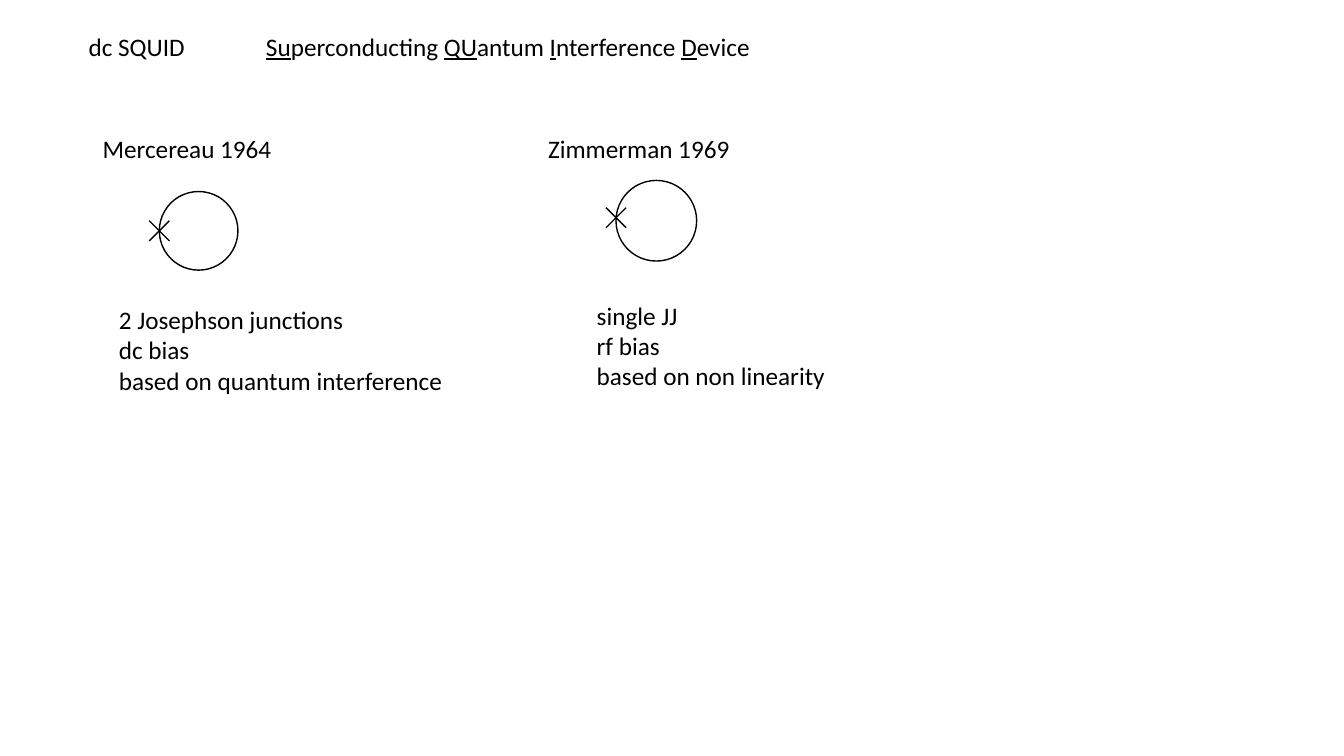
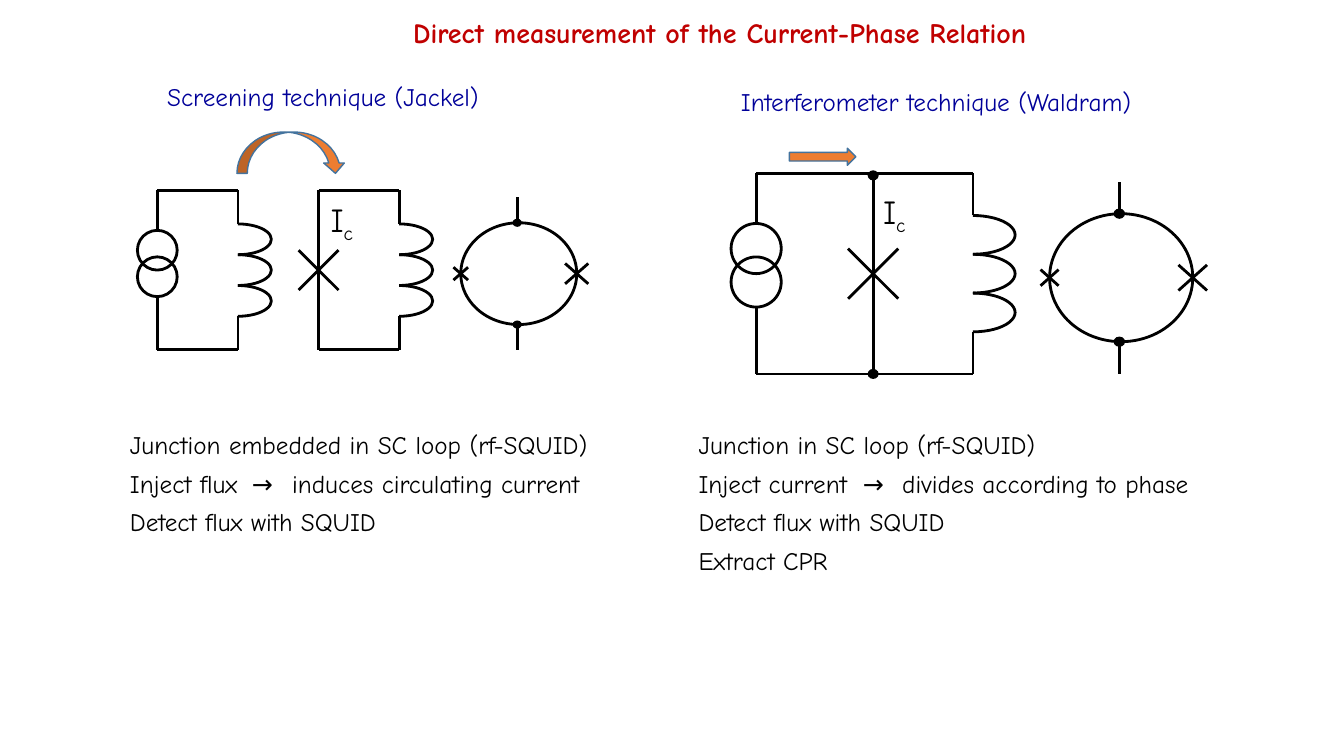
from dataclasses import dataclass

from lxml import etree
from pptx import Presentation
from pptx.dml.color import RGBColor
from pptx.enum.shapes import MSO_CONNECTOR, MSO_SHAPE
from pptx.enum.text import MSO_AUTO_SIZE, PP_ALIGN
from pptx.oxml.ns import qn
from pptx.util import Inches, Pt


@dataclass(frozen=True)
class Theme:
    """Colours, fonts and sizes used by both slides."""

    ink: RGBColor = RGBColor(0, 0, 0)
    paper: RGBColor = RGBColor(255, 255, 255)
    title: RGBColor = RGBColor(0xC0, 0, 0)
    heading: RGBColor = RGBColor(0, 0, 0x99)
    arrow: RGBColor = RGBColor(0xED, 0x7D, 0x31)
    arrow_edge: RGBColor = RGBColor(0x43, 0x73, 0x9E)
    plain: str = "Calibri"
    comic: str = "Comic Neue"
    body_size: int = 18
    title_size: int = 20
    symbol_size: int = 24
    thin: int = 1
    thick: int = 2


T = Theme()
PLAIN = {"name": T.plain, "size": Pt(T.body_size)}
COMIC = {"name": T.comic, "size": Pt(T.body_size)}
TITLE = {"name": T.comic, "size": Pt(T.title_size), "bold": True}
SYMBOL = {"name": T.comic, "size": Pt(T.symbol_size)}
UNDER = {"underline": True}


def apply(obj, values):
    """Set each named attribute on an object."""
    for name, value in values.items():
        setattr(obj, name, value)


def set_tabs(p, stops):
    """Give a paragraph left tab stops in inches."""
    tabs = etree.SubElement(p._p.get_or_add_pPr(), qn("a:tabLst"))
    for stop in stops:
        etree.SubElement(tabs, qn("a:tab"), pos=str(Inches(stop)), algn="l")


def add_text(s, box, paras, font, color=T.ink, para=None, tabs=()):
    """Add a text box whose paragraphs are strings or lists of (text, format) runs."""
    tf = s.shapes.add_textbox(*map(Inches, box)).text_frame
    apply(tf, {"word_wrap": True, "auto_size": MSO_AUTO_SIZE.SHAPE_TO_FIT_TEXT})
    for i, runs in enumerate(paras):
        p = tf.add_paragraph() if i else tf.paragraphs[0]
        if "\t" in runs:
            set_tabs(p, tabs)
        apply(p, para or {})
        for text, extra in [(runs, {})] if isinstance(runs, str) else runs:
            r = p.add_run()
            r.text = text
            values = {**font, **extra}
            baseline = values.pop("baseline", None)
            apply(r.font, values)
            r.font.color.rgb = color
            if baseline:
                r._r.get_or_add_rPr().set("baseline", baseline)


def add_shape(s, kind, box, fill=None, line=T.ink, width=T.thick):
    """Add a preset shape, hollow or unlined where the colour is None."""
    sp = s.shapes.add_shape(kind, *map(Inches, box))
    sp.shadow.inherit = False
    for part, color in ((sp.fill, fill), (sp.line.fill, line)):
        if color is None:
            part.background()
        else:
            part.solid()
            part.fore_color.rgb = color
    if line is not None:
        sp.line.width = Pt(width)
    return sp


def wire(s, *points, width=T.thick):
    """Join successive points with straight lines."""
    for start, end in zip(points, points[1:]):
        cn = s.shapes.add_connector(MSO_CONNECTOR.STRAIGHT, *map(Inches, start + end))
        cn.line.color.rgb = T.ink
        cn.line.width = Pt(width)
        etree.SubElement(cn._element.spPr, qn("a:effectLst"))


def cross(s, x, y, dx, dy, width=T.thick):
    """Mark a junction with a cross centred on a point."""
    for sign in (1, -1):
        wire(s, (x - dx, y - sign * dy), (x + dx, y + sign * dy), width=width)


def dot(s, x, y, w=0.11, h=0.1):
    """Mark a node with a filled dot centred on a point."""
    add_shape(s, MSO_SHAPE.OVAL, (x - w / 2, y - h / 2, w, h), T.ink, None)


def rails(s, x1, x2, y, h):
    """Draw the top and bottom wires of a circuit."""
    for level in (y, y + h):
        wire(s, (x1, level), (x2, level))


def source_branch(s, x, y, h):
    """Draw a vertical branch holding a current source."""
    d, step = h / 4, h / 6
    wire(s, (x, y), (x, y + d))
    wire(s, (x, y + 2 * d + step), (x, y + h))
    for i in range(2):
        add_shape(s, MSO_SHAPE.OVAL, (x - d / 2, y + d + i * step, d, d))


def coil_branch(s, x, y, h):
    """Draw a vertical branch holding a coil of three turns."""
    lead, w = 0.21 * h, 0.42 * h
    turn = (h - 2 * lead) / 3
    wire(s, (x, y), (x, y + lead))
    wire(s, (x, y + h - lead), (x, y + h))
    for i in range(3):
        arc = add_shape(s, MSO_SHAPE.ARC, (x - w / 2, y + lead + i * turn, w, turn))
        arc.adjustments[0], arc.adjustments[1] = 162, 54


def junction_branch(s, x, y, h, label):
    """Draw a vertical branch holding a junction, with its symbol at an offset."""
    wire(s, (x, y), (x, y + h))
    cross(s, x, y + h / 2, h / 8, h / 8)
    box = (x + label[0], y + label[1], 0.5, 0.51)
    add_text(s, box, [[("I", {}), ("c", {"baseline": "-25000"})]], SYMBOL)


def squid(s, x, y, w, h):
    """Draw a two-junction ring with its leads in the given box."""
    mid, lead = x + 0.487 * w, h / 4
    add_shape(s, MSO_SHAPE.OVAL, (x, y, w, h))
    for cx, k in ((x, 0.063), (x + w, 0.1)):
        cross(s, cx, y + h / 2, k * w, k * h)
    for node, end in ((y, y - lead), (y + h, y + h + lead)):
        wire(s, (mid, node), (mid, end))
        dot(s, mid, node, 0.08 * w, 0.08 * h)


def flow_arrow(s, kind, box):
    """Add an orange arrow showing what is injected."""
    add_shape(s, kind, box, T.arrow, T.arrow_edge, T.thin)


def screening_circuit(s, x, y, h):
    """Draw a drive loop, a junction loop and a detector side by side."""
    step = 0.8
    drive, junction, coil = (x + i * step for i in (1, 2, 3))
    rails(s, x, drive, y, h)
    source_branch(s, x, y, h)
    coil_branch(s, drive, y, h)
    rails(s, junction, coil, y, h)
    junction_branch(s, junction, y, h, (0.02, 0.03))
    coil_branch(s, coil, y, h)
    squid(s, x + 3.01, y + 0.32, 1.15, 1.01)
    flow_arrow(s, MSO_SHAPE.CURVED_DOWN_ARROW, (x + 0.79, y - 0.58, 1.08, 0.41))


def interferometer_circuit(s, x, y, h):
    """Draw a source, junction and coil in parallel beside a detector."""
    junction, coil = x + 1.16, x + 2.15
    rails(s, x, coil, y, h)
    source_branch(s, x, y, h)
    junction_branch(s, junction, y, h, (0, 0.12))
    coil_branch(s, coil, y, h)
    for level in (y + 0.02, y + h):
        dot(s, junction, level)
    squid(s, x + 2.91, y + 0.4, 1.42, 1.27)
    flow_arrow(s, MSO_SHAPE.RIGHT_ARROW, (x + 0.33, y - 0.25, 0.66, 0.17))


def ring_column(s, name_box, name, ring, cut, notes_box, notes):
    """Draw one named ring with a junction at its left and notes below."""
    x, y, d = ring
    add_text(s, name_box, [name], PLAIN, para={"alignment": PP_ALIGN.CENTER})
    add_shape(s, MSO_SHAPE.OVAL, (x, y, d, d), T.paper, width=T.thin)
    cross(s, x, cut, 0.1, 0.1, T.thin)
    add_text(s, notes_box, notes, PLAIN)


def squid_slide(prs):
    """Build the slide on the two kinds of ring."""
    s = prs.slides.add_slide(prs.slide_layouts[6])
    add_text(s, (0.78, 0.26, 1.19, 0.4), ["dc SQUID"], PLAIN)
    words = [("Su", UNDER), ("perconducting ", {}), ("QU", UNDER), ("antum ", {}),
             ("I", UNDER), ("nterference ", {}), ("D", UNDER), ("evice", {})]
    add_text(s, (2.54, 0.26, 5.06, 0.4), [words], PLAIN)
    ring_column(s, (0.78, 1.27, 2.15, 0.4), "Mercereau 1964",
                (1.58, 1.9, 0.78), 2.29, (1.08, 2.97, 3.69, 1.01),
                ["2 Josephson junctions", "dc bias", "based on quantum interference"])
    ring_column(s, (4.94, 1.27, 2.79, 0.4), "Zimmerman 1969",
                (6.11, 1.79, 0.8), 2.16, (5.82, 2.93, 2.54, 1.01),
                ["single JJ", "rf bias", "based on non linearity"])


def technique(s, heading_box, heading, circuit, origin, notes_box, notes, tabs):
    """Place one technique: heading, circuit and notes."""
    add_text(s, heading_box, [heading], COMIC, T.heading)
    circuit(s, *origin)
    add_text(s, notes_box, notes, COMIC, para={"space_after": Pt(6)}, tabs=tabs)


def measurement_slide(prs):
    """Build the slide comparing the two measuring techniques."""
    s = prs.slides.add_slide(prs.slide_layouts[6])
    add_text(s, (2.6, 0.1, 9.08, 0.44), ["Direct measurement of the Current-Phase Relation"],
             TITLE, T.title, {"alignment": PP_ALIGN.CENTER})
    technique(s, (1.56, 0.76, 3.61, 0.4), "Screening technique (Jackel)",
              screening_circuit, (1.56, 1.89, 1.58), (1.19, 4.21, 5.31, 1.18),
              ["Junction embedded in SC loop (rf-SQUID)",
               "Inject flux\t→\tinduces circulating current",
               "Detect flux with SQUID"], (1.21, 1.61))
    technique(s, (7.25, 0.81, 4.61, 0.4), "Interferometer technique (Waldram)",
              interferometer_circuit, (7.5, 1.72, 1.99), (6.83, 4.21, 5.81, 1.56),
              ["Junction in SC loop (rf-SQUID)",
               "Inject current\t→\tdivides according to phase",
               "Detect flux with SQUID",
               "Extract CPR"], (1.63, 2.02))


def main():
    """Build and save the presentation."""
    prs = Presentation()
    apply(prs, {"slide_width": Inches(13.33), "slide_height": Inches(7.5)})
    squid_slide(prs)
    measurement_slide(prs)
    prs.save("out.pptx")


if __name__ == "__main__":
    main()
